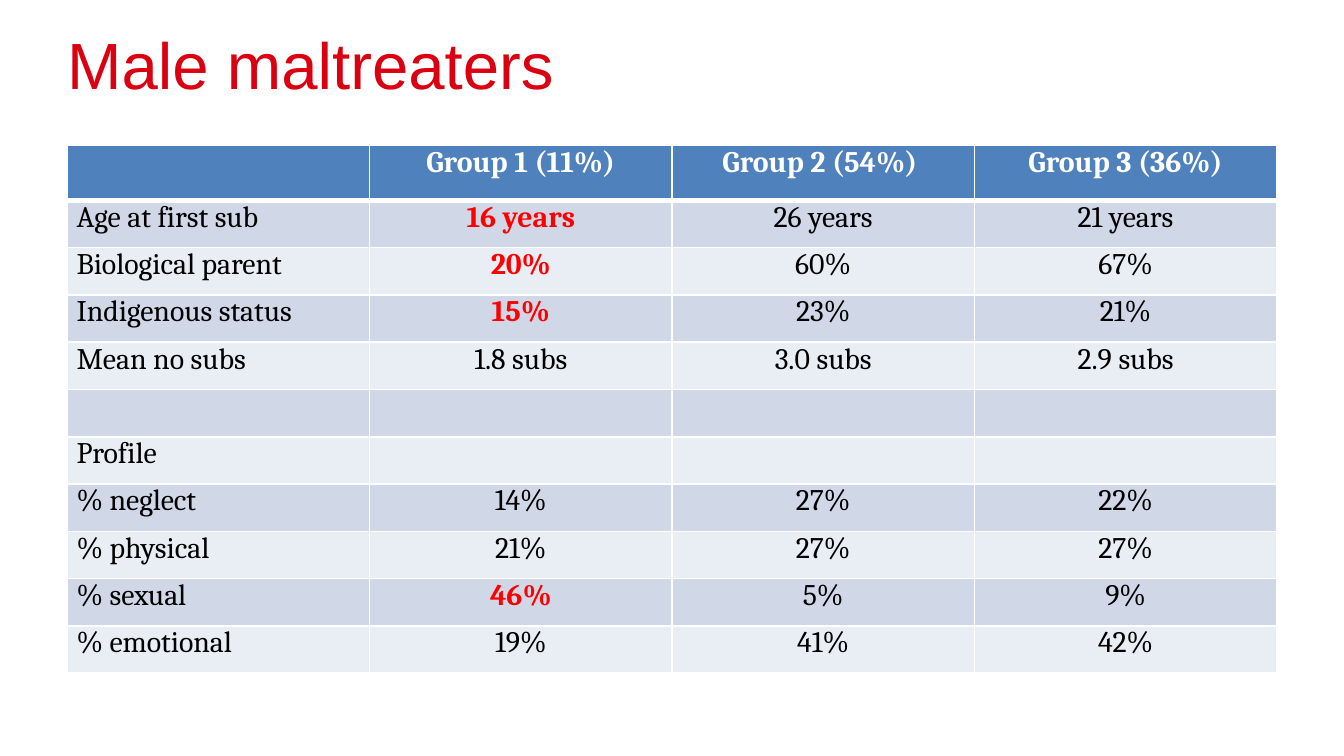
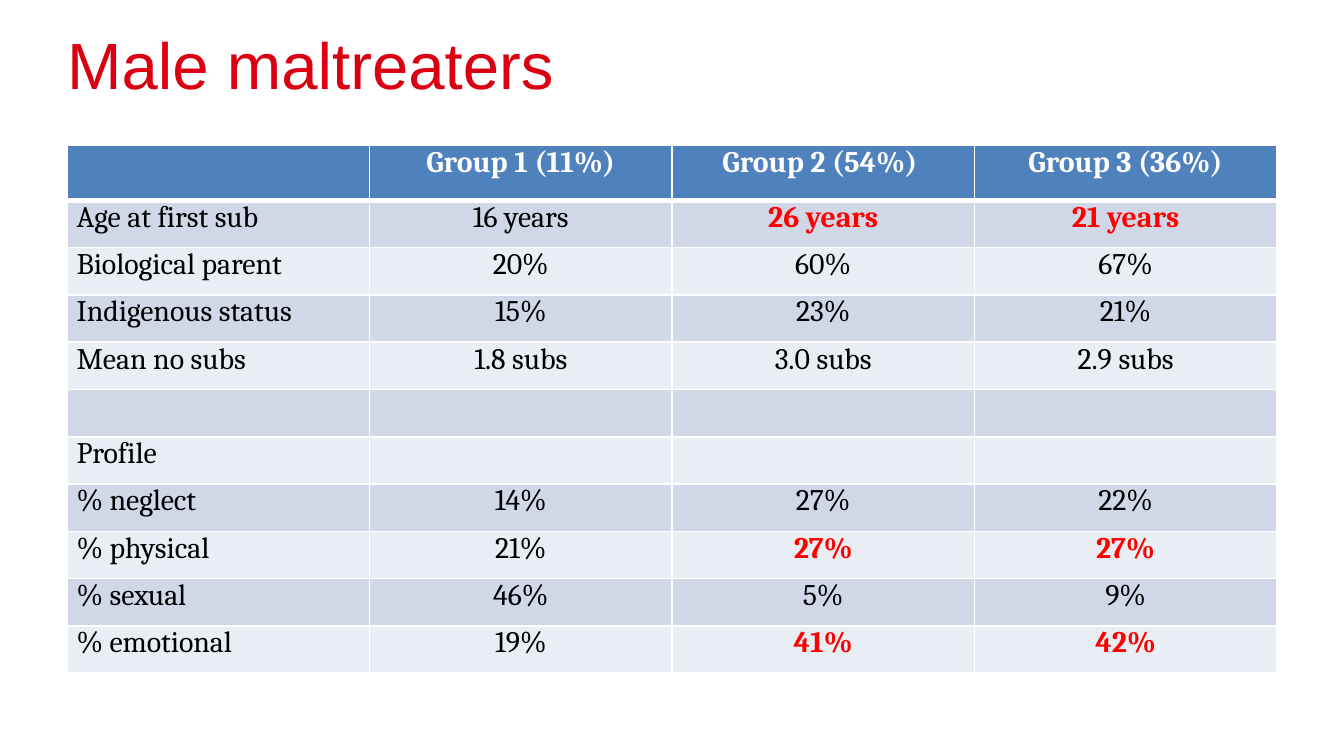
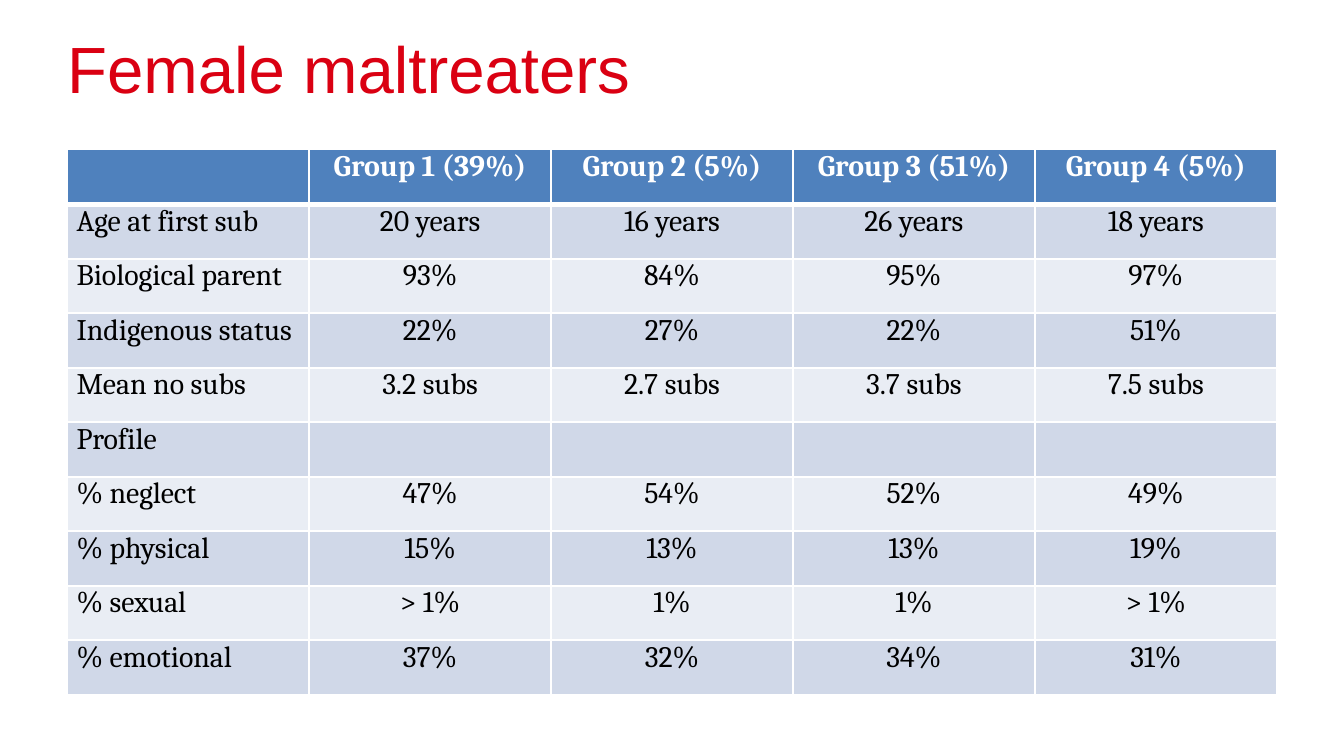
import pptx
import pptx.util
import pptx.dml.color
import pptx.enum.text
import pptx.oxml
import pptx.oxml.ns
from pptx.util import Inches

TITLE_RED = "DA0012"
HIGHLIGHT_RED = "FF0000"
HEADER_BLUE = "4F81BD"
BANDS = ["E9EDF4", "D0D8E8"]
WHITE = "FFFFFF"
BLACK = "000000"
LEFT, WIDTH = 0.5, 9
HEADER_HEIGHT = 0.41


def color(value):
    return pptx.dml.color.RGBColor.from_string(value)


def add_border(cell, side, points):
    cell._tc.get_or_add_tcPr().append(pptx.oxml.parse_xml(
        f'<a:{side} {pptx.oxml.ns.nsdecls("a")} w="{pptx.util.Pt(points)}">'
        f'<a:solidFill><a:srgbClr val="{WHITE}"/></a:solidFill></a:{side}>'))


male_rows = [
    ["", "Group 1 (11%)", "Group 2 (54%) ", "Group 3 (36%)"],
    ["Age at first sub", "16 years", "26 years", "21 years"],
    ["Biological parent", "20%", "60%", "67%"],
    ["Indigenous status", "15%", "23%", "21%"],
    ["Mean no subs", "1.8 subs", "3.0 subs", "2.9 subs"],
    ["", "", "", ""],
    ["Profile", "", "", ""],
    ["% neglect", "14%", "27%", "22%"],
    ["% physical", "21%", "27%", "27%"],
    ["% sexual", "46%", "5%", "9%"],
    ["% emotional", "19%", "41%", "42%"],
]
female_rows = [
    ["", "Group 1 (39%)", "Group 2 (5%)", "Group 3 (51%)", "Group 4 (5%)"],
    ["Age at first sub", "20 years", "16 years", "26 years", "18 years"],
    ["Biological parent", "93%", "84%", "95%", "97%"],
    ["Indigenous status", "22%", "27%", "22%", "51%"],
    ["Mean no subs", "3.2 subs", "2.7 subs", "3.7 subs", "7.5 subs"],
    ["Profile", "", "", "", ""],
    ["% neglect", "47%", "54%", "52%", "49%"],
    ["% physical", "15%", "13%", "13%", "19%"],
    ["% sexual", "> 1%", "1%", "1%", "> 1%"],
    ["% emotional", "37%", "32%", "34%", "31%"],
]
group_1_marks = {(1, 1), (2, 1), (3, 1), (9, 1)}
groups_2_3_marks = {(row, column) for row in (1, 8, 10) for column in (2, 3)}

slides = [
    ("Male maltreaters", 0.29, 1.08, 3.93, male_rows, group_1_marks),
    ("Male maltreaters", 0.29, 1.08, 3.93, male_rows, groups_2_3_marks),
    ("Female maltreaters", 0.32, 1.11, 4.06, female_rows, set()),
]

deck = pptx.Presentation()
deck.slide_width = Inches(10)
deck.slide_height = Inches(10 * 9 / 16)

for heading, title_top, table_top, table_height, rows, highlights in slides:
    page = deck.slides.add_slide(deck.slide_layouts[5])

    title = page.shapes.title
    title.left, title.top = Inches(LEFT), Inches(title_top)
    title.width, title.height = Inches(WIDTH), Inches(0.6)
    frame = title.text_frame
    frame.text = heading
    frame.margin_left = frame.margin_right = frame.margin_top = frame.margin_bottom = 0
    frame.vertical_anchor = pptx.enum.text.MSO_ANCHOR.TOP
    para = frame.paragraphs[0]
    para.alignment = pptx.enum.text.PP_ALIGN.LEFT
    para.line_spacing = 0.8
    para.font.name = "Arial"
    para.font.size = pptx.util.Pt(35)
    para.font.color.rgb = color(TITLE_RED)

    table = page.shapes.add_table(
        len(rows), len(rows[0]), Inches(LEFT), Inches(table_top),
        Inches(WIDTH), Inches(table_height)).table
    row_height = (table_height - HEADER_HEIGHT) / (len(rows) - 1)

    for row, values in enumerate(rows):
        is_header = row == 0
        table.rows[row].height = Inches(HEADER_HEIGHT if is_header else row_height)
        for column, value in enumerate(values):
            cell = table.cell(row, column)
            marked = (row, column) in highlights
            cell.margin_left = cell.margin_right = Inches(0.07)
            cell.margin_top = cell.margin_bottom = 0
            for side in ("lnL", "lnR", "lnT", "lnB"):
                under_header = (row, side) in ((0, "lnB"), (1, "lnT"))
                add_border(cell, side, 3 if under_header else 1)
            cell.fill.solid()
            cell.fill.fore_color.rgb = color(HEADER_BLUE if is_header else BANDS[row % 2])
            cell.text = value
            para = cell.text_frame.paragraphs[0]
            if column > 0:
                para.alignment = pptx.enum.text.PP_ALIGN.CENTER
            para.font.name = "Cambria"
            para.font.size = pptx.util.Pt(16)
            para.font.bold = is_header or marked
            para.font.color.rgb = color(
                WHITE if is_header else HIGHLIGHT_RED if marked else BLACK)

deck.save("out.pptx")
